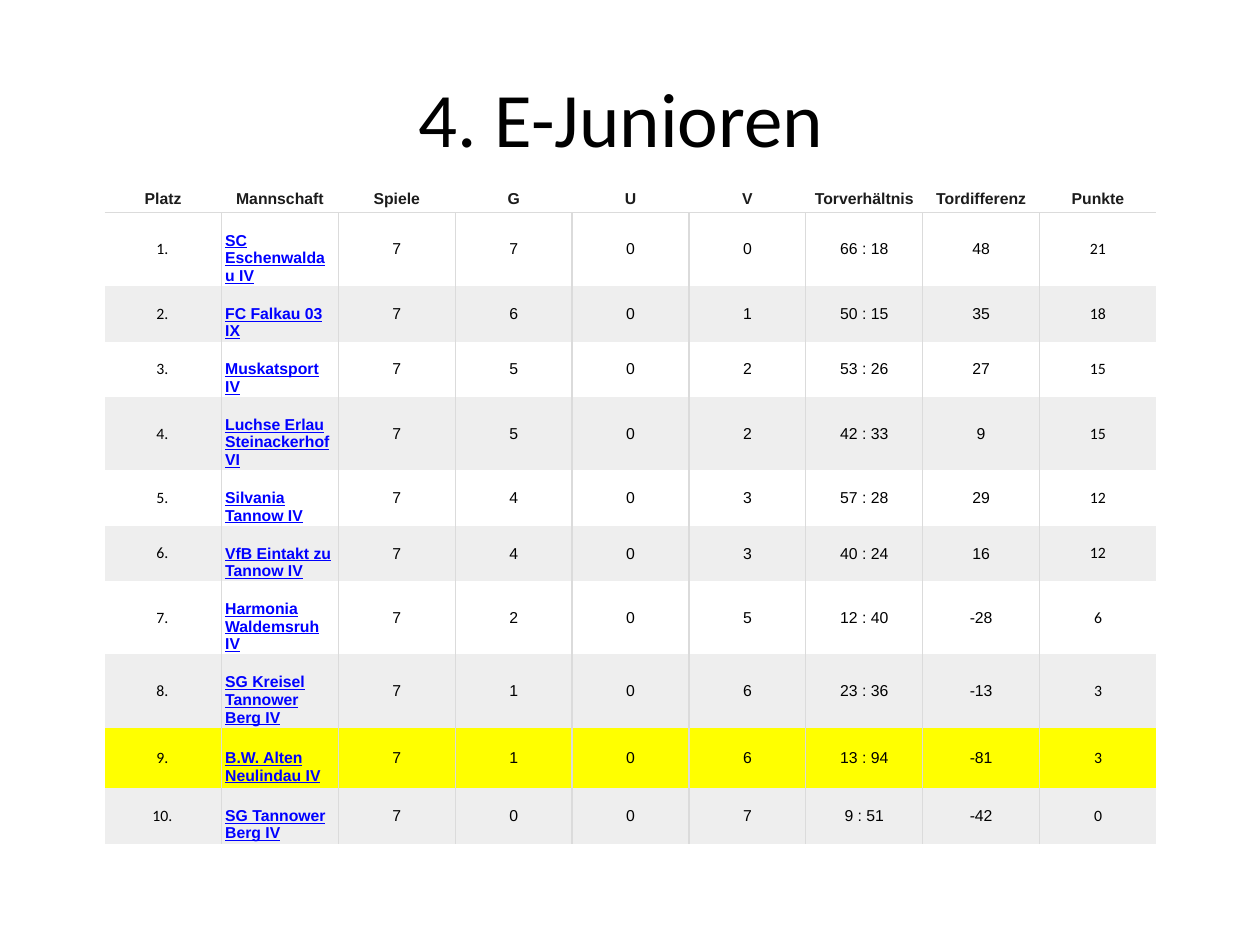
"""Builds a slide with the league table of the fourth E-Junioren team."""
from dataclasses import dataclass

import pptx
import pptx.dml.color
import pptx.enum.text
import pptx.oxml
import pptx.oxml.ns
import pptx.util

COLORS = {
    "text": "000000",
    "head": "1C1C1C",
    "link": "0000FF",
    "rule": "DBDBDB",
    "plain": "FFFFFF",
    "band": "EEEEEE",
    "marked": "FFFF00",
}
SLIDE_W, SLIDE_H = 10, 7.5
TABLE_LEFT, TABLE_TOP, TABLE_W = 0.83, 1.47, 8.35
HEAD_H, MARKED_H = 0.22, 0.48
LINE_H, PAD_X, PAD_Y = 0.14, 0.03, 0.01
NO_STYLE = "{2D5ABB26-0587-4C30-8999-92F81FD0307C}"
HEADERS = ("Platz", "Mannschaft", "Spiele", "G", "U", "V",
           "Torverhältnis", "Tordifferenz", "Punkte")
TEAM_COL, LAST_COL = 1, len(HEADERS) - 1
ALIGN = pptx.enum.text.PP_ALIGN


@dataclass(frozen=True)
class Team:
    name: str
    won: int
    drawn: int
    lost: int
    goals: str
    diff: int
    points: int
    height: float = 0.44
    marked: bool = False

    def values(self, place: int) -> list[str]:
        played = self.won + self.drawn + self.lost
        return [f"{place}.", self.name, str(played), str(self.won), str(self.drawn),
                str(self.lost), self.goals, str(self.diff), str(self.points)]

    def fill(self, place: int) -> str:
        if self.marked:
            return "marked"
        return "plain" if place % 2 else "band"


TEAMS = (
    Team("SC Eschenwaldau IV", 7, 0, 0, "66 : 18", 48, 21, height=0.58),
    Team("FC Falkau 03 IX", 6, 0, 1, "50 : 15", 35, 18),
    Team("Muskatsport IV", 5, 0, 2, "53 : 26", 27, 15),
    Team("Luchse Erlau Steinackerhof VI", 5, 0, 2, "42 : 33", 9, 15, height=0.58),
    Team("Silvania Tannow IV", 4, 0, 3, "57 : 28", 29, 12),
    Team("VfB Eintakt zu Tannow IV", 4, 0, 3, "40 : 24", 16, 12),
    Team("Harmonia Waldemsruh IV", 2, 0, 5, "12 : 40", -28, 6, height=0.58),
    Team("SG Kreisel Tannower Berg IV", 1, 0, 6, "23 : 36", -13, 3, height=0.58),
    Team("B.W. Alten Neulindau IV", 1, 0, 6, "13 : 94", -81, 3,
         height=MARKED_H, marked=True),
    Team("SG Tannower Berg IV", 0, 0, 7, "9 : 51", -42, 0),
)


def write(tf, text: str, *, size: float = 9, font: str = "Arial", color: str = "text",
          bold: bool = False, underline: bool = False, align=ALIGN.CENTER) -> None:
    p = tf.paragraphs[0]
    p.alignment = align
    r = p.add_run()
    r.text = text
    r.font.size = pptx.util.Pt(size)
    r.font.name = font
    r.font.bold = bold
    r.font.underline = underline
    r.font.color.rgb = pptx.dml.color.RGBColor.from_string(COLORS[color])


def format_cell(cell, fill: str, sides: str, left: float = PAD_X, top: float = PAD_Y) -> None:
    cell.vertical_anchor = pptx.enum.text.MSO_ANCHOR.MIDDLE
    cell.margin_left, cell.margin_right = pptx.util.Inches(left), pptx.util.Inches(PAD_X)
    cell.margin_top, cell.margin_bottom = pptx.util.Inches(top), pptx.util.Inches(PAD_Y)
    tc_pr = cell._tc.get_or_add_tcPr()
    for side in sides:
        tc_pr.append(pptx.oxml.parse_xml(
            f'<a:ln{side} {pptx.oxml.ns.nsdecls("a")} w="9525"><a:solidFill>'
            f'<a:srgbClr val="{COLORS["rule"]}"/></a:solidFill></a:ln{side}>'))
    cell.fill.solid()
    cell.fill.fore_color.rgb = pptx.dml.color.RGBColor.from_string(COLORS[fill])


def body_sides(col: int) -> str:
    return ("L" if col else "") + ("R" if col < LAST_COL else "")


def fill_team_row(table, place: int, team: Team) -> None:
    table.rows[place].height = pptx.util.Inches(team.height)
    for col, text in enumerate(team.values(place)):
        cell = table.cell(place, col)
        is_team = col == TEAM_COL
        format_cell(cell, team.fill(place), body_sides(col),
                    left=PAD_X if col else 0.02,
                    top=PAD_Y + LINE_H if is_team else PAD_Y)
        if is_team:
            write(cell.text_frame, text, color="link", bold=True, underline=True,
                  align=ALIGN.LEFT)
        else:
            write(cell.text_frame, text,
                  font="Calibri" if col in (0, LAST_COL) else "Arial")


def add_league_table(slide) -> None:
    height = HEAD_H + sum(team.height for team in TEAMS)
    table = slide.shapes.add_table(
        len(TEAMS) + 1, len(HEADERS),
        *map(pptx.util.Inches, (TABLE_LEFT, TABLE_TOP, TABLE_W, height))).table
    table.first_row = table.horz_banding = False
    table._tbl.tblPr.find(pptx.oxml.ns.qn("a:tableStyleId")).text = NO_STYLE
    for column in table.columns:
        column.width = pptx.util.Inches(TABLE_W / len(HEADERS))
    table.rows[0].height = pptx.util.Inches(HEAD_H)
    for col, text in enumerate(HEADERS):
        format_cell(table.cell(0, col), "plain", "B")
        write(table.cell(0, col).text_frame, text, color="head", bold=True)
    for place, team in enumerate(TEAMS, start=1):
        fill_team_row(table, place, team)


def add_title(slide) -> None:
    sp = slide.shapes.title
    sp.left, sp.top = pptx.util.Inches(0.05 * SLIDE_W), pptx.util.Inches(0.04 * SLIDE_H)
    sp.width, sp.height = pptx.util.Inches(0.9 * SLIDE_W), pptx.util.Inches(1.25)
    sp.text_frame.vertical_anchor = pptx.enum.text.MSO_ANCHOR.MIDDLE
    write(sp.text_frame, "4. E-Junioren ", size=44, font="Calibri")


def main() -> None:
    prs = pptx.Presentation()
    prs.slide_width = pptx.util.Inches(SLIDE_W)
    prs.slide_height = pptx.util.Inches(SLIDE_H)
    slide = prs.slides.add_slide(prs.slide_layouts[5])
    add_title(slide)
    add_league_table(slide)
    prs.save("out.pptx")


if __name__ == "__main__":
    main()
